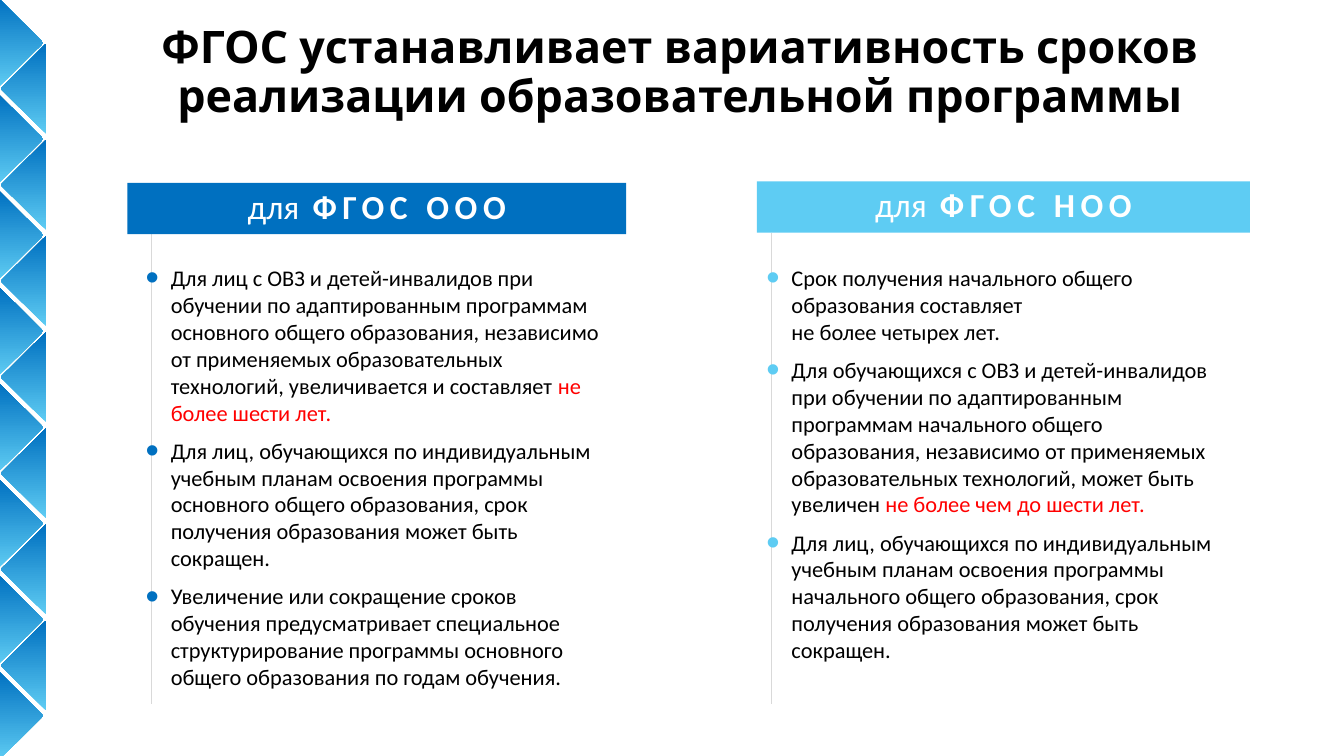
from copy import deepcopy

from lxml import etree
from pptx import Presentation
from pptx import util as u
from pptx.dml import color
from pptx.enum import shapes, text
from pptx.oxml import ns

Pt = u.Pt
BLUE, SKY, RED, BLACK, WHITE, GREY = "0070C0", "5ECCF3", "FF0000", "000000", "FFFFFF", "D9D9D9"


def rgb(value):
    return color.RGBColor.from_string(value)


def add_text(paragraph, content, size=12, font="Calibri", ink=BLACK, bold=False, spacing=0):
    for index, line in enumerate(content.split("\n")):
        if index:
            paragraph.add_line_break()
            paragraph._p[-1].append(deepcopy(run._r.rPr))
        run = paragraph.add_run()
        run.text = line
        run.font.size, run.font.name, run.font.bold = Pt(size), font, bold
        run.font.color.rgb = rgb(ink)
        if spacing:
            run._r.get_or_add_rPr().set("spc", str(spacing * 100))


class Deck:
    """Holds the style and the current slide and draws each kind of element."""

    def __init__(self, width, height):
        self.show = Presentation()
        self.show.slide_width, self.show.slide_height = Pt(width), Pt(height)
        self.slide = self.show.slides.add_slide(self.show.slide_layouts[6])
        self.items = self.slide.shapes

    def triangle(self, base_x, tip_x, middle, half=24.1):
        builder = self.items.build_freeform(Pt(base_x), Pt(middle - half))
        builder.add_line_segments([(Pt(tip_x), Pt(middle)), (Pt(base_x), Pt(middle + half))])
        facet = builder.convert_to_shape()
        facet.shadow.inherit = False
        facet.line.fill.background()
        facet.fill.gradient()
        facet.fill.gradient_angle = 90
        for stop, shade, position in zip(facet.fill.gradient_stops, (SKY, BLUE), (0, 1)):
            stop.color.rgb, stop.position = rgb(shade), position

    def rule(self, x, top, bottom):
        rule = self.items.add_connector(shapes.MSO_CONNECTOR.STRAIGHT, Pt(x), Pt(top), Pt(x), Pt(bottom))
        rule.line.color.rgb, rule.line.width = rgb(GREY), Pt(0.5)
        etree.SubElement(rule._element.spPr, ns.qn("a:effectLst"))

    def frame(self, item, inset_x, inset_y, anchor):
        frame = item.text_frame
        frame.word_wrap, frame.vertical_anchor = True, anchor
        frame.margin_left = frame.margin_right = Pt(inset_x)
        frame.margin_top = frame.margin_bottom = Pt(inset_y)
        return frame

    def title(self, box, content):
        item = self.items.add_textbox(*map(Pt, box))
        line = self.frame(item, 5.3, 2.6, text.MSO_ANCHOR.MIDDLE).paragraphs[0]
        line.alignment, line.line_spacing = text.PP_ALIGN.CENTER, 0.9
        add_text(line, content, size=24, font="Karla", bold=True)

    def banner(self, box, shade, name):
        item = self.items.add_shape(shapes.MSO_SHAPE.RECTANGLE, *map(Pt, box))
        item.shadow.inherit = False
        item.fill.solid()
        item.fill.fore_color.rgb = rgb(shade)
        item.line.fill.background()
        line = self.frame(item, 2.9, 0, text.MSO_ANCHOR.MIDDLE).paragraphs[0]
        line.alignment, line.line_spacing, line.space_before = text.PP_ALIGN.CENTER, 0.9, Pt(7.5)
        add_text(line, "для", size=18, ink=WHITE)
        add_text(line, f" {name}", size=18, ink=WHITE, bold=True, spacing=3)

    def bullets(self, box, shade, entries):
        item = self.items.add_textbox(*map(Pt, box))
        frame = self.frame(item, 5.3, 2.6, text.MSO_ANCHOR.TOP)
        for index, (body, limit) in enumerate(entries):
            entry = frame.add_paragraph() if index else frame.paragraphs[0]
            entry.space_before = Pt(6)
            props = entry._p.get_or_add_pPr()
            props.set("marL", str(Pt(13.5)))
            props.set("indent", str(Pt(-13.5)))
            tint = etree.SubElement(props, ns.qn("a:buClr"))
            etree.SubElement(tint, ns.qn("a:srgbClr"), val=shade)
            etree.SubElement(props, ns.qn("a:buSzPct"), val="170000")
            etree.SubElement(props, ns.qn("a:buFont"), typeface="Arial")
            etree.SubElement(props, ns.qn("a:buChar"), char="•")
            add_text(entry, body)
            if limit:
                add_text(entry, limit, ink=RED)


BASIC_TERMS = [
    ("Для лиц с ОВЗ и детей-инвалидов при обучении по адаптированным программам основного общего "
     "образования, независимо от применяемых образовательных технологий, увеличивается и составляет ",
     "не более шести лет."),
    ("Для лиц, обучающихся по индивидуальным учебным планам освоения программы основного общего "
     "образования, срок получения образования может быть сокращен.", ""),
    ("Увеличение или сокращение сроков обучения предусматривает специальное структурирование "
     "программы основного общего образования по годам обучения.", ""),
]
PRIMARY_TERMS = [
    ("Срок получения начального общего образования составляет \nне более четырех лет.", ""),
    ("Для обучающихся с ОВЗ и детей-инвалидов при обучении по адаптированным программам начального "
     "общего образования, независимо от применяемых образовательных технологий, может быть увеличен ",
     "не более чем до шести лет."),
    ("Для лиц, обучающихся по индивидуальным учебным планам освоения программы начального общего "
     "образования, срок получения образования может быть сокращен.", ""),
]


def main():
    deck = Deck(720, 405)
    pitch = 51.5
    for row in range(8):
        deck.triangle(-1, 23.3, 23 + row * pitch)
    for row in range(7):
        deck.triangle(24.6, 0.3, 47.6 + row * pitch)
    deck.title((54, 0, 620.6, 78.5), "ФГОС устанавливает вариативность сроков реализации образовательной программы")
    columns = [
        ("ФГОС ООО", BLUE, 81, (68.3, 98, 267.2, 27.4), (72.7, 139, 259.2, 251.3), BASIC_TERMS),
        ("ФГОС НОО", SKY, 413.3, (405.5, 97.2, 264.2, 27.4), (405.2, 139, 257.8, 251.3), PRIMARY_TERMS),
    ]
    for name, shade, rule_x, banner_box, list_box, terms in columns:
        deck.rule(rule_x, 124.6, 377.3)
        deck.bullets(list_box, shade, terms)
        deck.banner(banner_box, shade, name)
    deck.show.save("out.pptx")


if __name__ == "__main__":
    main()
